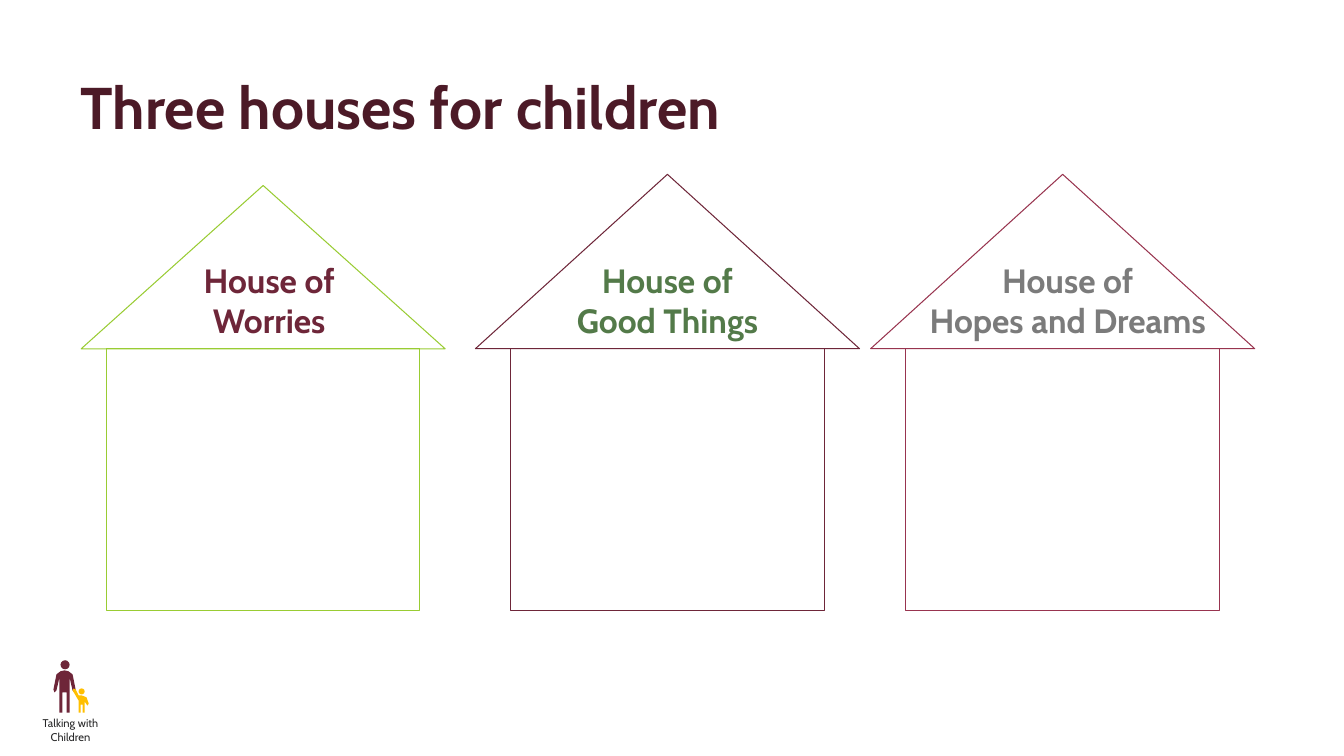
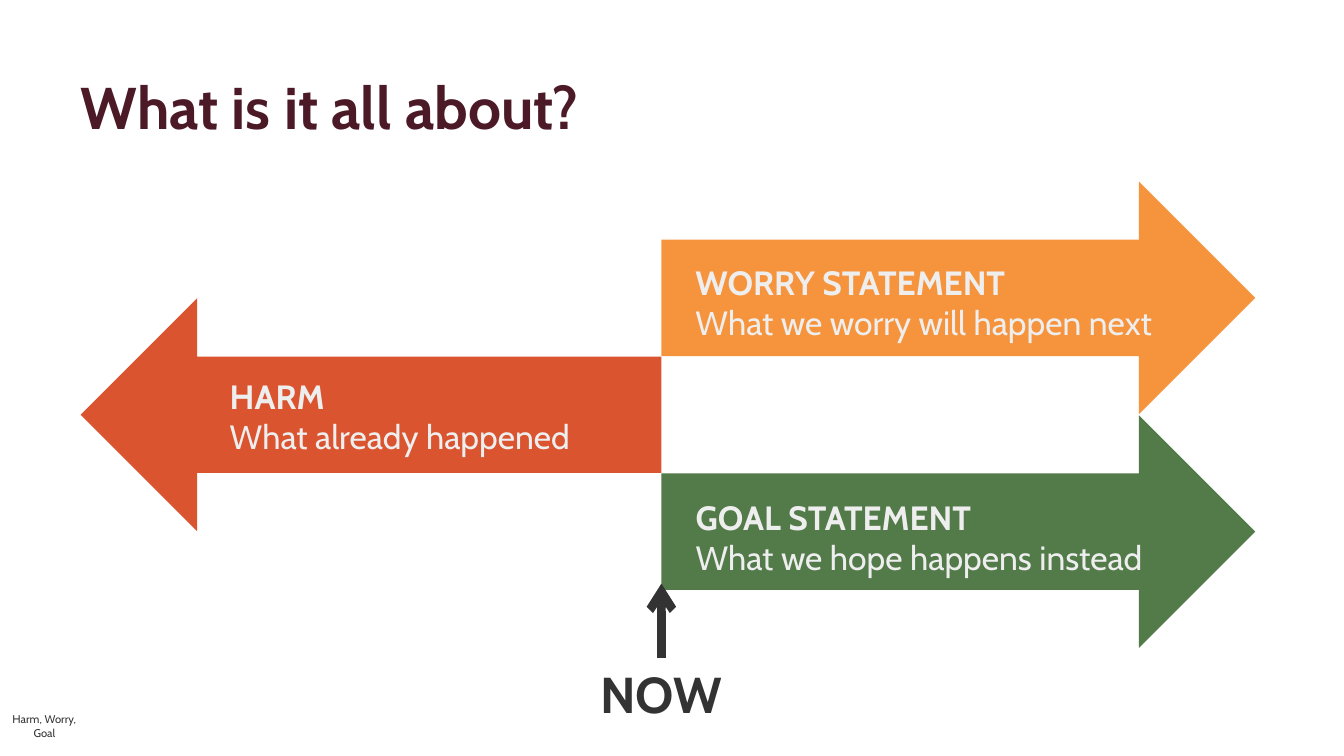
from dataclasses import dataclass
from typing import Any

import pptx
import pptx.dml.color
import pptx.enum.shapes
import pptx.enum.text
import pptx.oxml
import pptx.oxml.ns
import pptx.util

Inches = pptx.util.Inches
Pt = pptx.util.Pt
Preset = pptx.enum.shapes.MSO_SHAPE
Align = pptx.enum.text.PP_ALIGN
Anchor = pptx.enum.text.MSO_ANCHOR

COLORS = {
    "title": "4C1A27", "plum": "6E2639", "berry": "98344F", "lime": "99CC33",
    "green": "537A49", "gray": "7B7B7B", "yellow": "FFBF00", "ink": "262627",
    "dark": "333333", "orange": "F6943D", "red": "D9542F", "pale": "EEEEEE",
}

# Text formats, shared by both slides
FORMATS: dict[str, dict[str, Any]] = {
    "title": {"name": "Cabin", "size": Pt(42), "bold": True},
    "heading": {"name": "Cabin", "size": Pt(24), "bold": True},
    "body": {"name": "Cabin", "size": Pt(24), "bold": False},
    "now": {"name": "Cabin", "size": Pt(36), "bold": True},
    "caption": {"name": "Cabin", "size": Pt(8), "bold": False},
}

# House geometry
WALL_TOP, WALL_WIDTH, WALL_HEIGHT = 3.46, 3.11, 2.6
HOUSE_LABEL_TOP, HOUSE_LABEL_HEIGHT = 2.53, 0.91

# Timeline geometry
NOW_X, ARROW_HEIGHT, STATEMENT_HEIGHT = 6.56, 2.31, 0.78

# Pictogram outlines, in hundredths of an inch below PICTOGRAM_TOP
PICTOGRAM_TOP = 6.0
ADULT_AXIS = 64
ADULT_HALF = [(68, 66), (72, 69), (75, 84), (74, 87), (72, 85),
              (69, 72), (69, 107), (66, 107), (66, 87)]
ADULT_BODY = [(64, 65), *ADULT_HALF,
              *[(2 * ADULT_AXIS - x, y) for x, y in reversed(ADULT_HALF)]]
CHILD_BODY = [(81, 90), (78, 90), (75, 84), (73, 83), (72, 85), (78, 95),
              (78, 107), (80, 107), (80, 99), (82, 99), (82, 107), (84, 107),
              (84, 96), (86, 99), (87, 100), (88, 98), (86, 92), (84, 91)]


@dataclass(frozen=True)
class Box:
    left: float
    top: float
    width: float
    height: float

    def emu(self) -> list[int]:
        return [Inches(v) for v in (self.left, self.top, self.width, self.height)]


@dataclass(frozen=True)
class Line:
    text: str
    style: str


@dataclass(frozen=True)
class House:
    axis: float
    roof_width: float
    roof_height: float
    outline: str
    label: tuple[str, ...]
    label_axis: float
    label_width: float
    label_color: str


@dataclass(frozen=True)
class Statement:
    preset: Any
    left: float
    top: float
    width: float
    fill: str
    heading: str
    body: str
    text_left: float
    text_top: float
    text_width: float


HOUSES = [
    House(2.61, 3.61, 1.62, "lime", ("House of", "Worries"), 2.67, 2.01, "plum"),
    House(6.62, 3.81, 1.73, "plum", ("House of", "Good Things"), 6.62, 2.65, "green"),
    House(10.54, 3.81, 1.73, "berry", ("House of", "Hopes and Dreams"),
          10.59, 3.2, "gray"),
]

STATEMENTS = [
    Statement(Preset.RIGHT_ARROW, NOW_X, 1.8, 5.89, "orange", "WORRY STATEMENT",
              "What we worry will happen next", 6.8, 2.55, 5.1),
    Statement(Preset.LEFT_ARROW, 0.8, 2.96, 5.76, "red", "HARM",
              "What already happened", 2.18, 3.68, 4.5),
    Statement(Preset.RIGHT_ARROW, NOW_X, 4.12, 5.89, "green", "GOAL STATEMENT",
              "What we hope happens instead", 6.8, 4.88, 4.91),
]


def rgb(color: str) -> pptx.dml.color.RGBColor:
    return pptx.dml.color.RGBColor.from_string(COLORS[color])


def set_format(target: Any, values: dict[str, Any]) -> None:
    for attribute, value in values.items():
        setattr(target, attribute, value)


def add_text(slide: Any, box: Box, lines: list[Line], color: str,
             paragraph_format: dict[str, Any],
             anchor: Any = Anchor.TOP) -> None:
    frame = slide.shapes.add_textbox(*box.emu()).text_frame
    set_format(frame, {"word_wrap": True, "vertical_anchor": anchor})
    for index, line in enumerate(lines):
        paragraph = frame.add_paragraph() if index else frame.paragraphs[0]
        set_format(paragraph, paragraph_format)
        run = paragraph.add_run()
        run.text = line.text
        set_format(run.font, FORMATS[line.style])
        run.font.color.rgb = rgb(color)


def paint(shape: Any, fill: str | None = None, outline: str | None = None) -> None:
    shape.shadow.inherit = False
    if fill:
        shape.fill.solid()
        shape.fill.fore_color.rgb = rgb(fill)
    else:
        shape.fill.background()
    if outline:
        shape.line.color.rgb = rgb(outline)
        shape.line.width = Pt(0.75)
    else:
        shape.line.fill.background()


def add_titled_slide(deck: Any, title: str) -> Any:
    slide = deck.slides.add_slide(deck.slide_layouts[6])
    add_text(slide, Box(0.7, 0.4, 11.92, 1.4), [Line(title, "title")], "title",
             {"alignment": Align.LEFT, "line_spacing": 0.9}, Anchor.MIDDLE)
    return slide


def add_caption(slide: Any, box: Box, text: str, color: str) -> None:
    add_text(slide, box, [Line(text, "caption")], color,
             {"alignment": Align.CENTER})


def add_house(slide: Any, house: House) -> None:
    wall = Box(house.axis - WALL_WIDTH / 2, WALL_TOP, WALL_WIDTH, WALL_HEIGHT)
    roof = Box(house.axis - house.roof_width / 2, WALL_TOP - house.roof_height,
               house.roof_width, house.roof_height)
    for preset, box in ((Preset.FLOWCHART_PROCESS, wall),
                        (Preset.ISOSCELES_TRIANGLE, roof)):
        paint(slide.shapes.add_shape(preset, *box.emu()), outline=house.outline)
    label = Box(house.label_axis - house.label_width / 2, HOUSE_LABEL_TOP,
                house.label_width, HOUSE_LABEL_HEIGHT)
    add_text(slide, label, [Line(text, "heading") for text in house.label],
             house.label_color, {"alignment": Align.CENTER})


def add_figure(slide: Any, head: Box, body: list[tuple[int, int]], color: str) -> None:
    paint(slide.shapes.add_shape(Preset.OVAL, *head.emu()), fill=color)
    outline = slide.shapes.build_freeform(*body[0], scale=Inches(0.01))
    outline.add_line_segments(body[1:], close=True)
    paint(outline.convert_to_shape(Inches(0), Inches(PICTOGRAM_TOP)), fill=color)


def add_statement(slide: Any, statement: Statement) -> None:
    arrow = Box(statement.left, statement.top, statement.width, ARROW_HEIGHT)
    paint(slide.shapes.add_shape(statement.preset, *arrow.emu()),
          fill=statement.fill)
    text = Box(statement.text_left, statement.text_top,
               statement.text_width, STATEMENT_HEIGHT)
    add_text(slide, text, [Line(statement.heading, "heading"),
                           Line(statement.body, "body")],
             "pale", {"alignment": Align.LEFT})


def add_now_pointer(slide: Any) -> None:
    pointer = slide.shapes.add_connector(
        pptx.enum.shapes.MSO_CONNECTOR.STRAIGHT,
        Inches(NOW_X), Inches(6.53), Inches(NOW_X), Inches(5.79))
    pointer.line.color.rgb = rgb("dark")
    pointer.line.width = Pt(6)
    namespace = pptx.oxml.ns.nsdecls("a")
    pointer.line._get_or_add_ln().append(
        pptx.oxml.parse_xml(f'<a:tailEnd {namespace} type="arrow"/>'))
    pointer._element.spPr.append(
        pptx.oxml.parse_xml(f"<a:effectLst {namespace}/>"))
    add_text(slide, Box(NOW_X - 1.19, 6.53, 2.38, 0.71), [Line("NOW", "now")],
             "dark", {"alignment": Align.CENTER})


def build_houses(deck: Any) -> None:
    slide = add_titled_slide(deck, "Three houses for children")
    for house in HOUSES:
        add_house(slide, house)
    # Adult and child pictogram with its caption
    add_figure(slide, Box(0.6, 6.55, 0.09, 0.09), ADULT_BODY, "plum")
    add_figure(slide, Box(0.78, 6.83, 0.06, 0.06), CHILD_BODY, "yellow")
    add_caption(slide, Box(0.25, 7.06, 0.9, 0.21), "Talking with Children", "ink")


def build_timeline(deck: Any) -> None:
    slide = add_titled_slide(deck, "What is it all about?")
    for statement in STATEMENTS:
        add_statement(slide, statement)
    add_now_pointer(slide)
    add_caption(slide, Box(0, 7.02, 0.88, 0.24), "Harm, Worry, Goal", "dark")


def main() -> None:
    deck = pptx.Presentation()
    set_format(deck, {"slide_width": Inches(13.33), "slide_height": Inches(7.5)})
    build_houses(deck)
    build_timeline(deck)
    deck.save("out.pptx")


if __name__ == "__main__":
    main()
